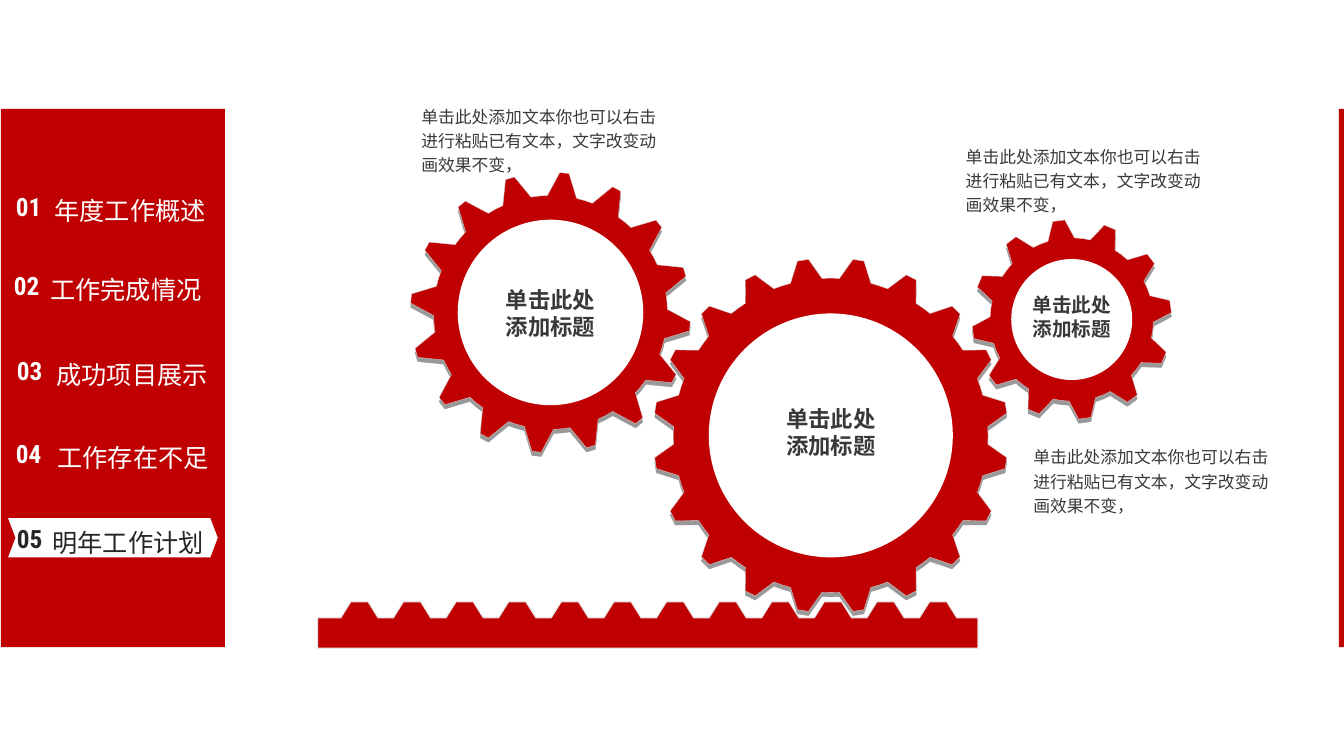
import math
from dataclasses import dataclass

import pptx
import pptx.dml.color
import pptx.enum.lang
import pptx.enum.shapes
import pptx.enum.text
import pptx.oxml
import pptx.oxml.ns
import pptx.util

SHAPE = pptx.enum.shapes.MSO_SHAPE
ALIGN = pptx.enum.text.PP_ALIGN
ANCHOR = pptx.enum.text.MSO_ANCHOR
COLUMNS, ROWS = 13.33, 7.5


@dataclass(frozen=True)
class Theme:
    red: str = "C00000"
    white: str = "FFFFFF"
    ink: str = "262626"
    text: str = "3B3838"
    gear_edge: str = "D7D7D7"
    rack_edge: str = "E6E6E6"
    number_font: str = "Roboto Condensed"
    menu_font: str = "Open Sans"
    body_font: str = "Noto Sans CJK SC"
    menu_size: int = 18
    title_size: int = 16
    small_title_size: int = 14
    caption_size: int = 12


@dataclass(frozen=True)
class Gear:
    """Lengths in grid cells, angles in degrees clockwise from the right."""
    x: float
    y: float
    tip: float
    root: float
    hole: float
    teeth: int
    phase: float
    tip_half: float
    root_half: float
    title_top: float
    title_size: int

    def outline(self):
        pitch = 360 / self.teeth
        profile = [(-self.root_half, self.root), (-self.tip_half, self.tip),
                   (self.tip_half, self.tip), (self.root_half, self.root),
                   (pitch / 2, self.root)]
        points = []
        for tooth in range(self.teeth):
            for offset, radius in profile:
                angle = math.radians(self.phase + tooth * pitch + offset)
                points.append((self.x + radius * math.cos(angle),
                               self.y + radius * math.sin(angle)))
        return points


class SlideBuilder:
    def __init__(self, presentation, theme):
        self.theme = theme
        self.column = presentation.slide_width / COLUMNS
        self.row = presentation.slide_height / ROWS
        self.slide = presentation.slides.add_slide(presentation.slide_layouts[6])

    def place(self, left, top, width, height):
        return [round(cells * unit) for cells, unit in
                zip((left, top, width, height), (self.column, self.row) * 2)]

    def paint(self, shape, fill, edge=None, edge_width=0):
        shape.fill.solid()
        shape.fill.fore_color.rgb = pptx.dml.color.RGBColor.from_string(fill)
        if edge:
            shape.line.color.rgb = pptx.dml.color.RGBColor.from_string(edge)
            shape.line.width = pptx.util.Pt(edge_width)
        else:
            shape.line.fill.background()
        shape.shadow.inherit = False
        return shape

    def block(self, kind, box, fill, shapes=None):
        shapes = shapes or self.slide.shapes
        return self.paint(shapes.add_shape(kind, *self.place(*box)), fill)

    def outline(self, points, edge, edge_width, shapes=None):
        shapes = shapes or self.slide.shapes
        points = [(x * self.column, y * self.row) for x, y in points]
        builder = shapes.build_freeform(*points[0], scale=1.0)
        builder.add_line_segments(points[1:], close=True)
        return self.paint(builder.convert_to_shape(), self.theme.red, edge, edge_width)

    def drop_shadow(self, shape):
        effects = shape._element.spPr.find(pptx.oxml.ns.qn("a:effectLst"))
        effects.append(pptx.oxml.parse_xml(
            f'<a:outerShdw {pptx.oxml.ns.nsdecls("a")} blurRad="0" dist="38100" '
            'dir="5400000" algn="t" rotWithShape="0"><a:srgbClr val="000000">'
            '<a:alpha val="40000"/></a:srgbClr></a:outerShdw>'))

    def gear(self, gear):
        shapes = self.slide.shapes.add_group_shape().shapes
        self.drop_shadow(self.outline(gear.outline(), self.theme.gear_edge, 0.25, shapes))
        hole = (gear.x - gear.hole, gear.y - gear.hole, 2 * gear.hole, 2 * gear.hole)
        self.block(SHAPE.OVAL, hole, self.theme.white, shapes)

    def text(self, box, lines, font, size, color, bold=False,
             anchor=ANCHOR.TOP, **paragraph_format):
        frame = self.slide.shapes.add_textbox(*self.place(*box)).text_frame
        frame_format = {"word_wrap": True, "vertical_anchor": anchor,
                        "auto_size": pptx.enum.text.MSO_AUTO_SIZE.SHAPE_TO_FIT_TEXT}
        run_format = {"name": font, "size": pptx.util.Pt(size), "bold": bold,
                      "language_id": pptx.enum.lang.MSO_LANGUAGE_ID.SIMPLIFIED_CHINESE}
        apply_format(frame, frame_format)
        for index, line in enumerate(lines):
            paragraph = frame.add_paragraph() if index else frame.paragraphs[0]
            apply_format(paragraph, paragraph_format)
            run = paragraph.add_run()
            run.text = line
            apply_format(run.font, run_format)
            run.font.color.rgb = pptx.dml.color.RGBColor.from_string(color)
            east_asian = pptx.oxml.parse_xml(
                f'<a:ea {pptx.oxml.ns.nsdecls("a")} typeface="{font}"/>')
            run._r.get_or_add_rPr().append(east_asian)


def apply_format(target, values):
    for name, value in values.items():
        setattr(target, name, value)


def rack_outline(left=3.15, right=9.7, tip=5.97, root=6.13, bottom=6.43,
                 first=3.38, last=9.12, teeth=12):
    pitch = (last - first) / (teeth - 1)
    points = [(left, root)]
    for tooth in range(teeth):
        start = first + tooth * pitch
        points += [(start, root), (start + 0.1, tip),
                   (start + 0.27, tip), (start + 0.37, root)]
    return points + [(right, root), (right, bottom), (left, bottom)]


def main():
    presentation = pptx.Presentation()
    presentation.slide_width = pptx.util.Inches(13.33)
    presentation.slide_height = pptx.util.Inches(7.5)
    theme = Theme()
    builder = SlideBuilder(presentation, theme)

    builder.block(SHAPE.RECTANGLE, (0.01, 1.08, 2.22, 5.34), theme.red)
    marker = builder.block(SHAPE.CHEVRON, (0.08, 5.14, 2.08, 0.39), theme.white)
    marker.adjustments[0] = 0.19

    # Number left, label left, number top, label
    menu = [(0.06, 0.27, 1.85, "年度工作概述"),
            (0.04, 0.23, 2.63, "工作完成情况"),
            (0.07, 0.29, 3.48, "成功项目展示"),
            (0.06, 0.3, 4.3, "工作存在不足"),
            (0.07, 0.25, 5.14, "明年工作计划")]
    for number, (number_left, label_left, top, label) in enumerate(menu, 1):
        color = theme.ink if number == len(menu) else theme.white
        builder.text((number_left, top, 0.56, 0.4), [f"{number:02}"],
                     theme.number_font, theme.menu_size, color, bold=True)
        builder.text((label_left, top - 0.11, 2.04, 0.5), [label],
                     theme.menu_font, theme.menu_size, color,
                     alignment=ALIGN.CENTER, line_spacing=1.5)

    gears = [
        Gear(x=8.24, y=4.32, tip=1.76, root=1.56, hole=1.21, teeth=20, phase=9,
             tip_half=1.8, root_half=5.8, title_top=3.97, title_size=theme.title_size),
        Gear(x=10.63, y=3.17, tip=0.99, root=0.81, hole=0.6, teeth=12, phase=22.5,
             tip_half=3.5, root_half=9.4, title_top=2.86, title_size=theme.small_title_size),
        Gear(x=5.46, y=3.1, tip=1.39, root=1.16, hole=0.92, teeth=16, phase=5.7,
             tip_half=1.9, root_half=7.2, title_top=2.79, title_size=theme.title_size),
    ]
    for gear in gears:
        builder.gear(gear)
    builder.outline(rack_outline(), theme.rack_edge, 0.75)

    for gear in gears:
        builder.text((gear.x - 1.15, gear.title_top, 2.3, 0.64), ["单击此处", "添加标题"],
                     theme.body_font, gear.title_size, theme.text, bold=True,
                     alignment=ALIGN.CENTER)
    caption = "单击此处添加文本你也可以右击进行粘贴已有文本，文字改变动画效果不变，"
    for left, top in [(10.15, 4.34), (9.48, 1.36), (4.08, 0.96)]:
        builder.text((left, top, 2.55, 0.83), [caption], theme.body_font,
                     theme.caption_size, theme.text, anchor=ANCHOR.MIDDLE, line_spacing=1.2)

    builder.block(SHAPE.RECTANGLE, (13.28, 1.08, 0.05, 5.34), theme.red)
    presentation.save("out.pptx")


if __name__ == "__main__":
    main()
